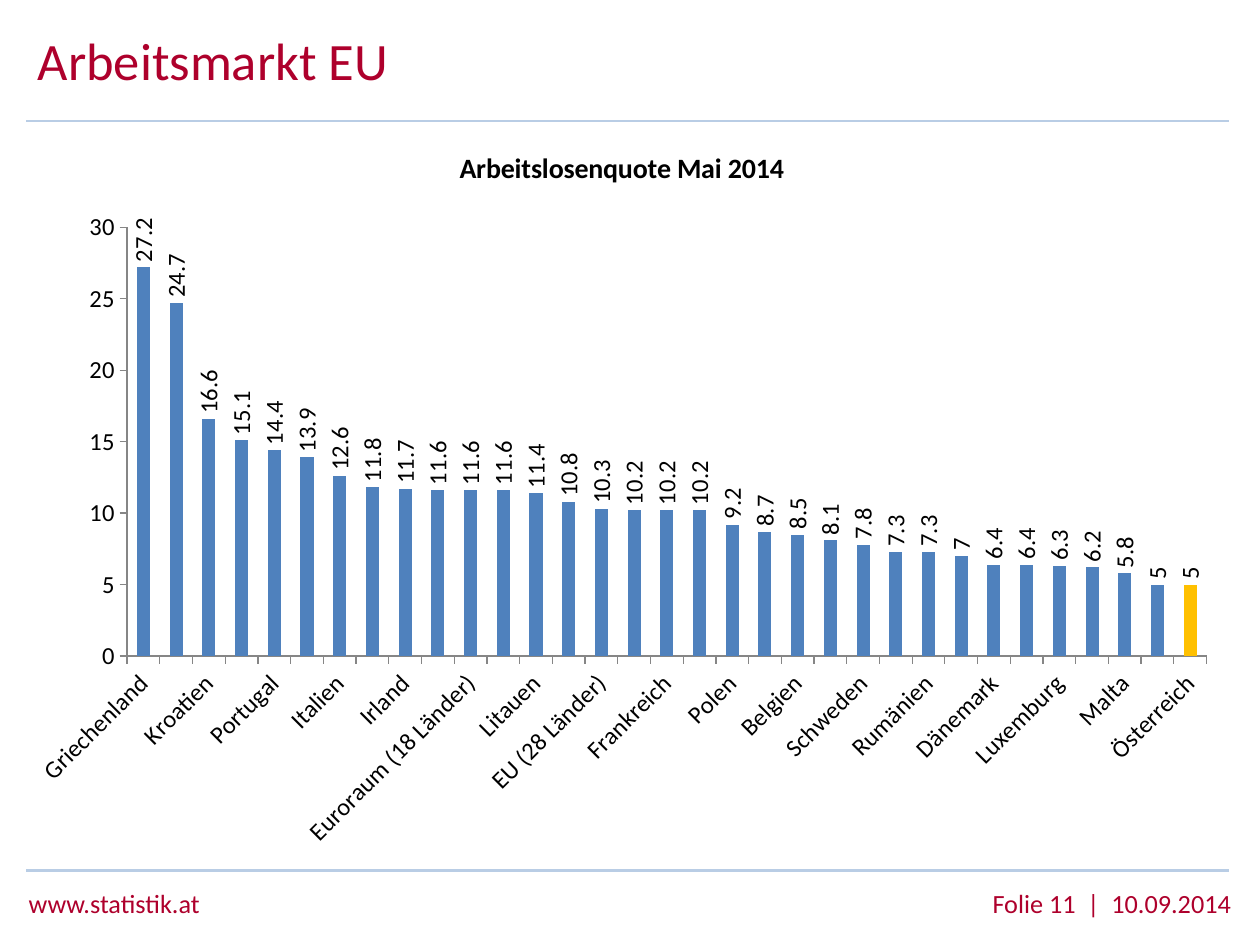
from lxml import etree
from pptx import Presentation
from pptx.chart.data import CategoryChartData
from pptx.dml.color import RGBColor
from pptx.enum.chart import XL_CHART_TYPE, XL_LABEL_POSITION, XL_TICK_MARK
from pptx.enum.shapes import MSO_CONNECTOR
from pptx.enum.text import MSO_ANCHOR, PP_ALIGN
from pptx.oxml import parse_xml
from pptx.oxml.ns import nsdecls, qn
from pptx.util import Inches, Pt

COLUMN = XL_CHART_TYPE.COLUMN_CLUSTERED
OUTSIDE_END = XL_LABEL_POSITION.OUTSIDE_END
TICK_OUT = XL_TICK_MARK.OUTSIDE
STRAIGHT = MSO_CONNECTOR.STRAIGHT
MIDDLE = MSO_ANCHOR.MIDDLE
LEFT, RIGHT = PP_ALIGN.LEFT, PP_ALIGN.RIGHT

FONT = "Calibri"
RED, RULE, BLACK, AXIS = "AE002C", "B9CDE5", "000000", "868686"
BAR, HIGHLIGHT = "4F81BD", "FFC000"
TITLE = "Arbeitsmarkt EU"
CHART_TITLE = "Arbeitslosenquote Mai 2014"
FOOTERS = [
    ("www.statistik.at", 0.13, 2.27, LEFT),
    ("Folie 11  |  10.09.2014", 6.25, 3.62, RIGHT),
]
RULE_TOPS = [0.96, 6.91]
PLOT_LAYOUT = {"x": 0.094, "y": 0.142, "w": 0.886, "h": 0.58}
HIGHLIGHTED = "Österreich"
RATES = [
    ("Griechenland", 27.2), ("Spanien", 24.7), ("Kroatien", 16.6),
    ("Zypern", 15.1), ("Portugal", 14.4), ("Slowakei", 13.9),
    ("Italien", 12.6), ("Bulgarien", 11.8), ("Irland", 11.7),
    ("Euroraum (wechselnde Zusammensetzung)", 11.6),
    ("Euroraum (18 Länder)", 11.6), ("Euroraum (17 Länder)", 11.6),
    ("Litauen", 11.4), ("Lettland", 10.8), ("EU (28 Länder)", 10.3),
    ("EU (27 Länder)", 10.2), ("Frankreich", 10.2), ("Slowenien", 10.2),
    ("Polen", 9.2), ("Finnland", 8.7), ("Belgien", 8.5), ("Ungarn", 8.1),
    ("Schweden", 7.8), ("Estland", 7.3), ("Rumänien", 7.3),
    ("Niederlande", 7), ("Dänemark", 6.4), ("Vereinigtes Königreich", 6.4),
    ("Luxemburg", 6.3), ("Tschechische Republik", 6.2), ("Malta", 5.8),
    ("Deutschland", 5), ("Österreich", 5),
]


def color(value):
    return RGBColor.from_string(value)


def style_font(font, size, value, bold=False):
    font.name, font.size, font.bold = FONT, Pt(size), bold
    font.color.rgb = color(value)


def rotate_text(element, degrees):
    body = element.find(qn("c:txPr")).find(qn("a:bodyPr"))
    body.set("rot", str(degrees * 60000))
    body.set("vert", "horz")


def add_rule(slide, top):
    rule = slide.shapes.add_connector(
        STRAIGHT, Inches(0.21), Inches(top), Inches(9.75), Inches(top))
    rule.line.color.rgb = color(RULE)
    rule.line.width = Pt(1.5)
    etree.SubElement(rule._element.spPr, qn("a:effectLst"))


def add_footer(slide, text, left, width, alignment):
    box = slide.shapes.add_textbox(
        Inches(left), Inches(6.99), Inches(width), Inches(0.35))
    box.text_frame.word_wrap = True
    box.text_frame.text = text
    paragraph = box.text_frame.paragraphs[0]
    paragraph.alignment = alignment
    style_font(paragraph.runs[0].font, 15, RED)


def format_title(title):
    title.left, title.top = Inches(0.2), Inches(0.25)
    title.width, title.height = Inches(7.63), Inches(0.53)
    frame = title.text_frame
    frame.text = TITLE
    frame.vertical_anchor = MIDDLE
    paragraph = frame.paragraphs[0]
    paragraph.alignment = LEFT
    paragraph.line_spacing = Pt(30)
    style_font(paragraph.runs[0].font, 30, RED)


def set_plot_layout(chart):
    plot_area = chart._chartSpace.chart.plotArea
    for old in plot_area.findall(qn("c:layout")):
        plot_area.remove(old)
    settings = '<c:layoutTarget val="inner"/><c:xMode val="edge"/><c:yMode val="edge"/>'
    settings += "".join(f'<c:{key} val="{value}"/>' for key, value in PLOT_LAYOUT.items())
    plot_area.insert(0, parse_xml(
        f'<c:layout {nsdecls("c")}><c:manualLayout>{settings}</c:manualLayout></c:layout>'))


def add_rate_chart(slide):
    names = [name for name, _ in RATES]
    data = CategoryChartData()
    data.categories = names
    data.add_series("Series 1", [rate for _, rate in RATES])
    chart = slide.shapes.add_chart(
        COLUMN, Inches(0.1), Inches(0.97), Inches(9.67), Inches(5.87), data).chart
    style_font(chart.font, 14, BLACK)
    chart.has_legend = False
    chart.has_title = True
    chart.chart_title.text_frame.text = CHART_TITLE
    style_font(chart.chart_title.text_frame.paragraphs[0].runs[0].font, 16, BLACK, True)
    set_plot_layout(chart)

    for axis in (chart.category_axis, chart.value_axis):
        axis.has_major_gridlines = False
        axis.major_tick_mark = TICK_OUT
        axis.format.line.color.rgb = color(AXIS)
        style_font(axis.tick_labels.font, 14, BLACK)
    chart.value_axis.minimum_scale, chart.value_axis.maximum_scale = 0, 30
    chart.value_axis.major_unit = 5
    categories = chart.category_axis._element
    rotate_text(categories, -45)
    categories.find(qn("c:noMultiLvlLbl")).addprevious(
        parse_xml(f'<c:tickLblSkip {nsdecls("c")} val="2"/>'))

    plot = chart.plots[0]
    plot.gap_width, plot.vary_by_categories = 150, False
    series = plot.series[0]
    for part, value in ((series, BAR), (series.points[names.index(HIGHLIGHTED)], HIGHLIGHT)):
        part.format.fill.solid()
        part.format.fill.fore_color.rgb = color(value)
    labels = series.data_labels
    labels.show_value = True
    labels.position = OUTSIDE_END
    style_font(labels.font, 14, BLACK)
    rotate_text(labels._element, -90)


def main():
    """Build the slide on unemployment rates in the EU."""
    presentation = Presentation()
    presentation.slide_width, presentation.slide_height = Inches(10), Inches(7.5)
    slide = presentation.slides.add_slide(presentation.slide_layouts[5])
    format_title(slide.shapes.title)
    for footer in FOOTERS:
        add_footer(slide, *footer)
    for top in RULE_TOPS:
        add_rule(slide, top)
    add_rate_chart(slide)
    presentation.save("out.pptx")


if __name__ == "__main__":
    main()
